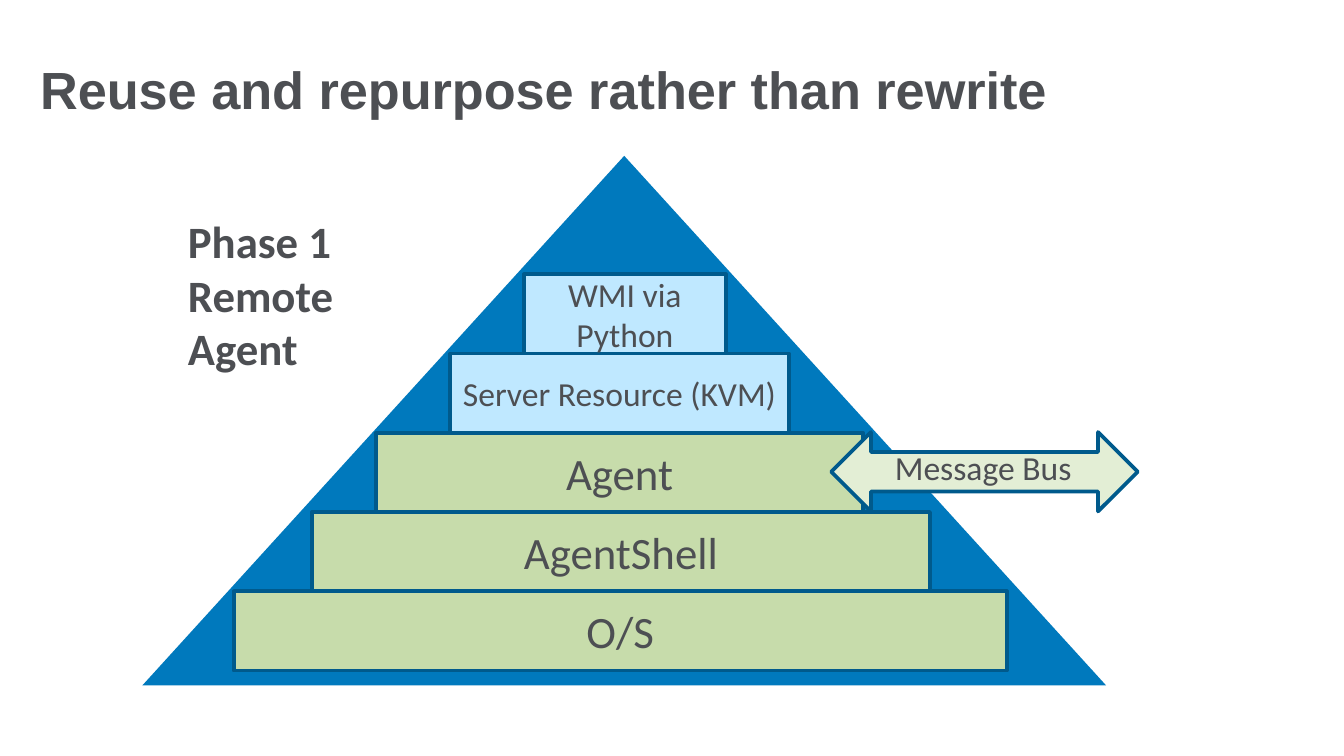
"""Build the slide showing the remote agent pyramid and its message bus."""
from dataclasses import dataclass

from pptx import Presentation
from pptx.dml.color import RGBColor
from pptx.enum.shapes import MSO_SHAPE
from pptx.enum.text import MSO_ANCHOR, MSO_AUTO_SIZE, PP_ALIGN
from pptx.shapes.autoshape import Shape
from pptx.slide import Slide
from pptx.util import Inches, Pt

BLUE = RGBColor(0x00, 0x79, 0xBD)
NAVY = RGBColor(0x00, 0x5A, 0x8C)
SKY = RGBColor(0xBF, 0xE8, 0xFF)
GREEN = RGBColor(0xC7, 0xDC, 0xAB)
PALE_GREEN = RGBColor(0xE3, 0xEE, 0xD5)
GRAY = RGBColor(0x4D, 0x4F, 0x53)

PAGE_WIDTH = Inches(10)
PAGE_HEIGHT = PAGE_WIDTH * 9 // 16
BASE_TOP = 4.4
LAYER_HEIGHT = 0.59


@dataclass(frozen=True)
class Box:
    left: float
    top: float
    width: float
    height: float

    def lengths(self) -> list[Inches]:
        return [Inches(side) for side in (self.left, self.top, self.width, self.height)]


@dataclass(frozen=True)
class Layer:
    text: str
    left: float
    width: float
    fill: RGBColor = GREEN
    size: int = 24
    inset: float = 0.1


@dataclass(frozen=True)
class Label:
    lines: tuple[str, ...]
    box: Box
    size: int
    font: str = "Calibri"
    bold: bool = False
    wrap: bool = False
    anchor: MSO_ANCHOR = MSO_ANCHOR.TOP
    fit: MSO_AUTO_SIZE = MSO_AUTO_SIZE.SHAPE_TO_FIT_TEXT


LAYERS = (
    Layer("O/S", 1.74, 5.75),
    Layer("AgentShell", 2.32, 4.6),
    Layer("Agent", 2.8, 3.62),
    Layer("Server Resource (KVM)", 3.35, 2.52, SKY, 18, 0),
    Layer("WMI via Python", 3.9, 1.5, SKY, 18, 0),
)
TITLE = Label(("Reuse and repurpose rather than rewrite",), Box(0.2, 0.31, 9.61, 0.7), 28,
              "Arial", True, True, MSO_ANCHOR.MIDDLE, MSO_AUTO_SIZE.NONE)
BUS = Label(("Message Bus",), Box(6.56, 3.28, 1.53, 0.4), 18)
PHASE = Label(("Phase 1", "Remote", "Agent"), Box(1.3, 1.54, 1.29, 1.31), 24, bold=True)


def apply_format(target: object, values: dict[str, object]) -> None:
    for name, value in values.items():
        setattr(target, name, value)


def write_text(shape: Shape, lines: tuple[str, ...], align: PP_ALIGN,
               frame_format: dict[str, object], font_format: dict[str, object]) -> None:
    frame = shape.text_frame
    apply_format(frame, frame_format)
    frame.text = "\n".join(lines)
    for para in frame.paragraphs:
        para.alignment = align
        for span in para.runs:
            apply_format(span.font, font_format)
            span.font.color.rgb = GRAY


def draw_shape(page: Slide, kind: MSO_SHAPE, box: Box, fill: RGBColor,
               outlined: bool = True) -> Shape:
    shape = page.shapes.add_shape(kind, *box.lengths())
    shape.shadow.inherit = False
    shape.fill.solid()
    shape.fill.fore_color.rgb = fill
    if outlined:
        shape.line.color.rgb = NAVY
        shape.line.width = Pt(2)
    else:
        shape.line.fill.background()
    return shape


def draw_layer(page: Slide, layer: Layer, level: int) -> None:
    top = BASE_TOP - level * LAYER_HEIGHT
    box = Box(layer.left, top, layer.width, LAYER_HEIGHT)
    shape = draw_shape(page, MSO_SHAPE.RECTANGLE, box, layer.fill)
    inset = Inches(layer.inset)
    write_text(shape, (layer.text,), PP_ALIGN.CENTER,
               {"word_wrap": True, "vertical_anchor": MSO_ANCHOR.MIDDLE,
                "margin_left": inset, "margin_right": inset},
               {"name": "Calibri", "size": Pt(layer.size)})


def draw_label(page: Slide, label: Label) -> None:
    shape = page.shapes.add_textbox(*label.box.lengths())
    write_text(shape, label.lines, PP_ALIGN.LEFT,
               {"word_wrap": label.wrap, "vertical_anchor": label.anchor,
                "auto_size": label.fit},
               {"name": label.font, "size": Pt(label.size), "bold": label.bold})


def main() -> None:
    deck = Presentation()
    apply_format(deck, {"slide_width": PAGE_WIDTH, "slide_height": PAGE_HEIGHT})
    page = deck.slides.add_slide(deck.slide_layouts[6])
    draw_shape(page, MSO_SHAPE.ISOSCELES_TRIANGLE, Box(1.06, 1.16, 7.17, 3.94), BLUE, False)
    draw_label(page, TITLE)
    for level, layer in enumerate(LAYERS):
        draw_layer(page, layer, level)
    arrow = draw_shape(page, MSO_SHAPE.UP_DOWN_ARROW, Box(7.03, 2.37, 0.59, 2.28), PALE_GREEN)
    arrow.rotation = 270
    for label in (BUS, PHASE):
        draw_label(page, label)
    deck.save("out.pptx")


if __name__ == "__main__":
    main()
